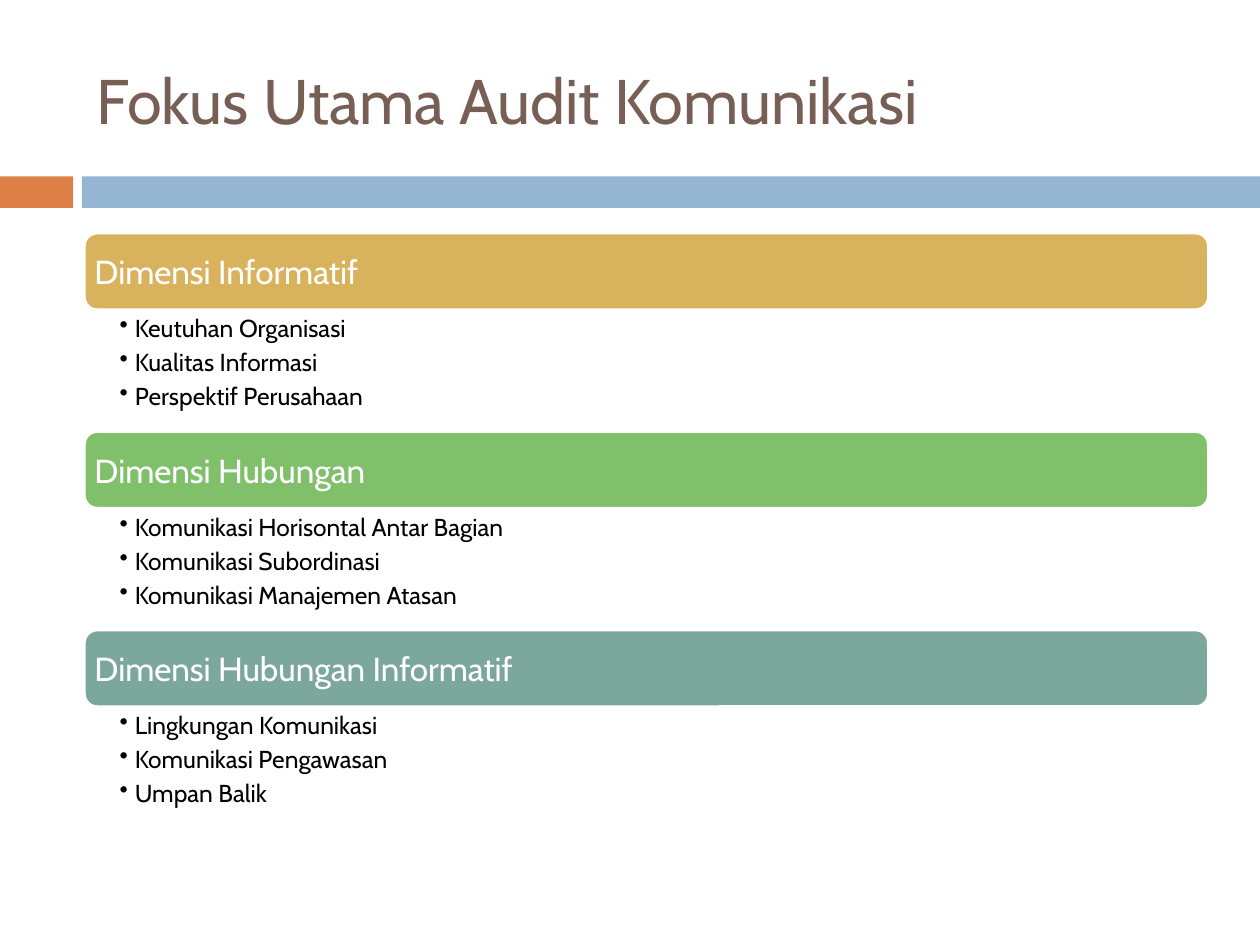
"""Build the slide on the main focus of a communication audit."""
from lxml.etree import SubElement as Sub
from pptx import Presentation
from pptx.dml.color import RGBColor as RGB
from pptx.enum.shapes import MSO_SHAPE as Kind
from pptx.enum.text import MSO_ANCHOR as Anchor, PP_ALIGN as Align
from pptx.oxml.ns import qn
from pptx.util import Inches, Pt

WHITE = RGB(0xFF, 0xFF, 0xFF)
BLACK = RGB(0, 0, 0)
BROWN = RGB(0x77, 0x5F, 0x55)
ORANGE = RGB(0xDD, 0x80, 0x47)
BLUE = RGB(0x94, 0xB6, 0xD2)
GOLD = RGB(0xD8, 0xB2, 0x5C)
GREEN = RGB(0x81, 0xC0, 0x6B)
TEAL = RGB(0x7B, 0xA7, 0x9D)

deck = Presentation()
deck.slide_width, deck.slide_height = Inches(10), Inches(7.5)
COL, ROW = deck.slide_width / 100, deck.slide_height / 100
LEFT, WIDE = 6.7, 89.2
TOP, STEP, BAR, LIST = 24.67, 21, 8.1, 12.9
shapes = deck.slides.add_slide(deck.slide_layouts[6]).shapes


def place(x, y, w, h, fill=None, kind=Kind.RECTANGLE):
    spot = [int(v) for v in (x * COL, y * ROW, w * COL, h * ROW)]
    if fill is None:
        return shapes.add_textbox(*spot)
    shape = shapes.add_shape(kind, *spot)
    shape.shadow.inherit = False
    shape.fill.solid()
    shape.fill.fore_color.rgb = fill
    shape.line.fill.background()
    return shape


def write(shape, lines, size, color, frame, bullet=False):
    body = shape.text_frame
    for name, value in {"word_wrap": True, **frame}.items():
        setattr(body, name, value)
    body.text = "\n".join(lines)
    for para in body.paragraphs:
        para.alignment = Align.LEFT
        if bullet:
            para.space_after = Pt(2.6)
            props = para._p.get_or_add_pPr()
            props.set("marL", str(Inches(0.12)))
            props.set("indent", str(-Inches(0.12)))
            Sub(props, qn("a:buChar"), char="•")
        for name, value in {"name": "Cabin", "size": Pt(size)}.items():
            setattr(para.font, name, value)
        para.font.color.rgb = color


place(0, 18.67, 5.8, 3.33, ORANGE)
place(6.5, 18.67, 93.5, 3.33, BLUE)
write(place(LEFT, 3.33, WIDE, 14.4), ["Fokus Utama Audit Komunikasi"], 36,
      BROWN, {"vertical_anchor": Anchor.MIDDLE})

head = {"vertical_anchor": Anchor.MIDDLE, "margin_left": Inches(0.05)}
tail = {"margin_left": Inches(0.28), "margin_right": Inches(0.15),
        "margin_top": Inches(0.03), "margin_bottom": Inches(0.03)}
groups = [
    ("Dimensi Informatif", GOLD,
     ["Keutuhan Organisasi", "Kualitas Informasi", "Perspektif Perusahaan"]),
    ("Dimensi Hubungan", GREEN,
     ["Komunikasi Horisontal Antar Bagian", "Komunikasi Subordinasi",
      "Komunikasi Manajemen Atasan"]),
    ("Dimensi Hubungan Informatif", TEAL,
     ["Lingkungan Komunikasi", "Komunikasi Pengawasan", "Umpan Balik"]),
]
for i, (title, fill, items) in enumerate(groups):
    top = TOP + i * STEP
    bar = place(LEFT, top, WIDE, BAR, fill, Kind.ROUNDED_RECTANGLE)
    bar.line.color.rgb = WHITE
    bar.line.width = Pt(1.5)
    write(bar, [title], 19, WHITE, head)
    write(place(LEFT, top + BAR, WIDE, LIST), items, 14, BLACK, tail, True)

deck.save("out.pptx")
